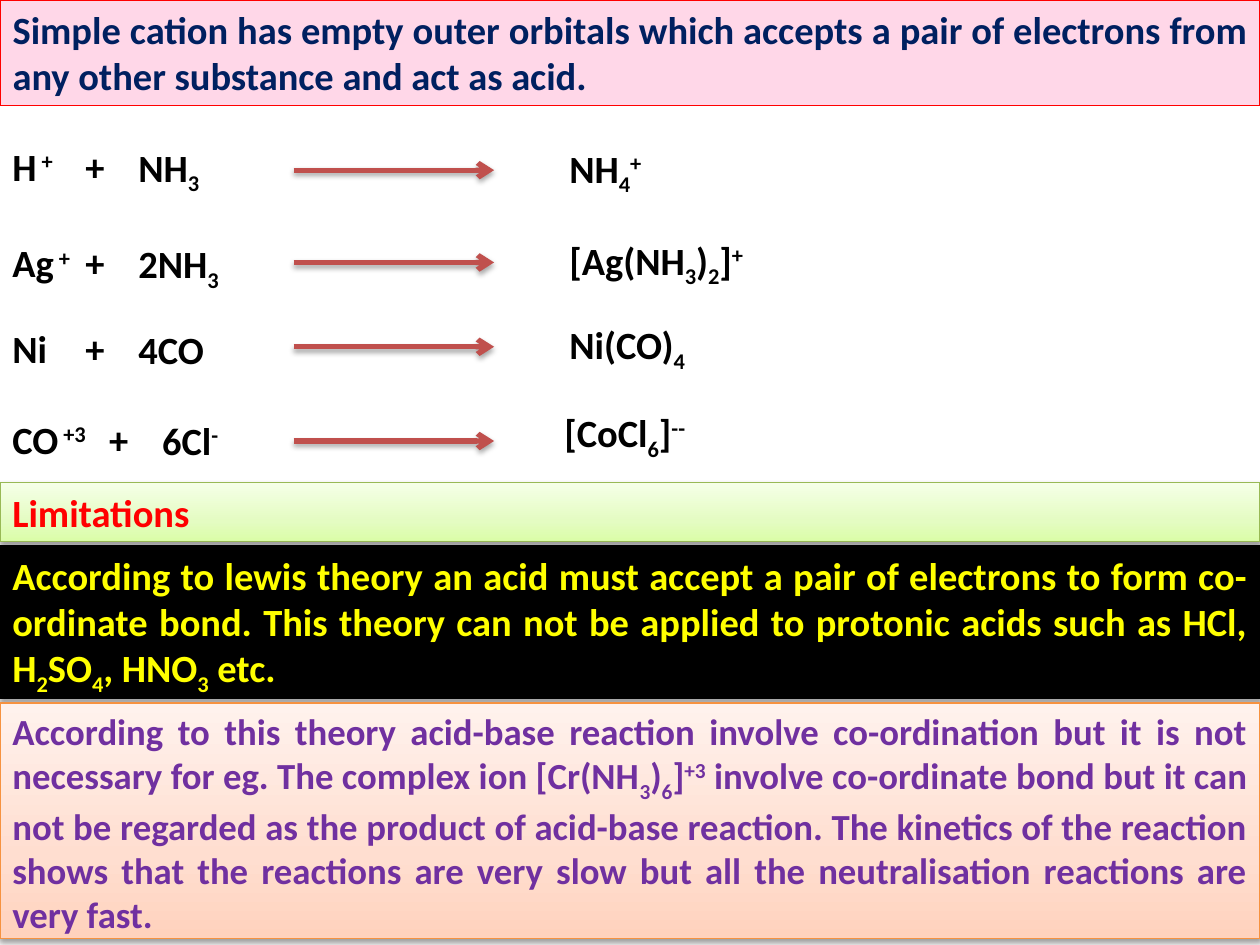
from dataclasses import dataclass
from typing import Optional

from lxml.etree import SubElement
from pptx import Presentation
from pptx.dml.color import RGBColor
from pptx.enum.shapes import MSO_CONNECTOR as Connector, MSO_SHAPE as Shape
from pptx.enum.text import MSO_ANCHOR as Anchor, MSO_AUTO_SIZE as AutoSize, PP_ALIGN as Align
from pptx.oxml.ns import qn
from pptx.util import Cm, Pt


@dataclass(frozen=True)
class Theme:
    font: str = "Calibri"
    size: float = 22
    small_size: float = 21
    ink: str = "000000"
    arrow: str = "C0504D"
    arrow_width: float = 3
    border_width: float = 0.75
    subscript: int = -25
    superscript: int = 30


THEME = Theme()
SLIDE_WIDTH, SLIDE_HEIGHT = 25.4, 19.05


@dataclass(frozen=True)
class Panel:
    """A full-width band; several fills make a gradient from bottom to top."""
    text: str
    top: float
    height: float
    fills: tuple[str, ...]
    border: str
    color: str
    size: float = THEME.size
    shadow: Optional[tuple[int, float]] = None  # opacity in %, distance in pt


@dataclass(frozen=True)
class Term:
    text: str
    width: float


@dataclass(frozen=True)
class Reaction:
    ion: Term
    ligand: Term
    product: Term
    top: float
    product_top: float
    arrow_y: float
    ligand_shift: float = 0
    product_shift: float = 0


# Scripts are set off with bars: |_3| is lowered, |^+| is raised
STATEMENT = Panel(
    "Simple cation has empty outer orbitals which accepts a pair of electrons "
    "from any other substance and act as acid.",
    0, 2.13, ("FFD7E8",), "FF0000", "002060")

LIMITATIONS = (
    Panel("Limitations", 9.73, 1.19, ("DAFDA7", "E4FCC2", "F5FFE7"),
          "98B955", "FF0000", shadow=(38, 1.6)),
    Panel("According to lewis theory an acid must accept a pair of electrons to "
          "form co-ordinate bond. This theory can not be applied to protonic acids "
          "such as HCl, H|_2|SO|_4|, HNO|_3| etc.",
          11, 3.07, ("000000",), "000000", "FFFF00", shadow=(35, 1.8)),
    Panel("According to this theory acid-base reaction involve co-ordination but it "
          "is not necessary for eg. The complex ion [Cr(NH|_3|)|_6|]|^+3| involve "
          "co-ordinate bond but it can not be regarded as the product of acid-base "
          "reaction. The kinetics of the reaction shows that the reactions are very "
          "slow but all the neutralisation reactions are very fast.",
          14.17, 4.75, ("FFD2BD", "FFDED0", "FFF2ED"),
          "F69240", "7030A0", THEME.small_size, (38, 1.6)),
)

REACTIONS = (
    Reaction(Term("H|^ +", 1.4), Term("NH|_3", 1.78), Term("NH|_4|^+", 2.06),
             2.75, 2.79, 3.43),
    Reaction(Term("Ag|^ +", 1.8), Term("2NH|_3", 2.18),
             Term("[Ag(NH|_3|)|_2|]|^+", 4.29), 4.7, 4.65, 5.29),
    Reaction(Term("Ni", 1.22), Term("4CO", 1.85), Term("Ni(CO)|_4", 2.92),
             6.42, 6.35, 6.99),
    Reaction(Term("CO|^ +3", 2.08), Term("6Cl|^-", 1.68),
             Term("[CoCl|_6|]|^--", 3.05), 8.26, 8.13, 8.89, 0.48, -0.1),
)
PLUS = Term("+", 0.91)
ION_X, PLUS_X, LIGAND_X, PRODUCT_X = 0, 1.47, 2.54, 11.23
ARROW_START, ARROW_END = 5.92, 9.96
TERM_HEIGHT = 1.19


def write(frame, text: str, *, color: str = THEME.ink, size: float = THEME.size,
          align=Align.LEFT, anchor=Anchor.TOP, wrap: bool = False) -> None:
    frame.word_wrap = wrap
    frame.auto_size = AutoSize.SHAPE_TO_FIT_TEXT
    frame.vertical_anchor = anchor
    paragraph = frame.paragraphs[0]
    paragraph.alignment = align
    baselines = {"_": THEME.subscript, "^": THEME.superscript}
    for piece in text.split("|"):
        baseline = baselines.get(piece[0])
        run = paragraph.add_run()
        run.text = piece[1:] if baseline else piece
        run.font.name = THEME.font
        run.font.size = Pt(size)
        run.font.bold = True
        run.font.color.rgb = RGBColor.from_string(color)
        if baseline:
            run.font._element.set("baseline", str(baseline * 1000))


def add_shadow(shape, opacity: int, distance: float) -> None:
    properties = shape._element.spPr
    effects = properties.find(qn("a:effectLst"))
    if effects is None:
        effects = SubElement(properties, qn("a:effectLst"))
    shadow = SubElement(effects, qn("a:outerShdw"), blurRad=str(Pt(3.1)),
                        dist=str(Pt(distance)), dir="5400000", rotWithShape="0")
    tint = SubElement(shadow, qn("a:srgbClr"), val="000000")
    SubElement(tint, qn("a:alpha"), val=str(opacity * 1000))


def fill_gradient(shape, colors: tuple[str, ...]) -> None:
    shape.fill.gradient()
    shape.fill.gradient_angle = 90
    stops = shape._element.spPr.find(qn("a:gradFill")).find(qn("a:gsLst"))
    for stop in list(stops):
        stops.remove(stop)
    for position, color in zip((0, 35, 100), colors):
        stop = SubElement(stops, qn("a:gs"), pos=str(position * 1000))
        SubElement(stop, qn("a:srgbClr"), val=color)


def format_panel(shape, panel: Panel) -> None:
    shape.left, shape.top = Cm(0), Cm(panel.top)
    shape.width, shape.height = Cm(SLIDE_WIDTH), Cm(panel.height)
    if len(panel.fills) > 1:
        fill_gradient(shape, panel.fills)
    else:
        shape.fill.solid()
        shape.fill.fore_color.rgb = RGBColor.from_string(panel.fills[0])
    shape.line.color.rgb = RGBColor.from_string(panel.border)
    shape.line.width = Pt(THEME.border_width)
    shape.shadow.inherit = False
    if panel.shadow:
        add_shadow(shape, *panel.shadow)
    write(shape.text_frame, panel.text, color=panel.color, size=panel.size,
          align=Align.JUSTIFY, wrap=True)


def add_term(slide, term: Term, left: float, top: float) -> None:
    box = slide.shapes.add_textbox(Cm(left), Cm(top), Cm(term.width), Cm(TERM_HEIGHT))
    write(box.text_frame, term.text)


def add_arrow(slide, y: float) -> None:
    arrow = slide.shapes.add_connector(
        Connector.STRAIGHT, Cm(ARROW_START), Cm(y), Cm(ARROW_END), Cm(y))
    arrow.line.color.rgb = RGBColor.from_string(THEME.arrow)
    arrow.line.width = Pt(THEME.arrow_width)
    SubElement(arrow._element.spPr.find(qn("a:ln")), qn("a:tailEnd"), type="arrow")
    add_shadow(arrow, 35, 1.8)


def add_reaction(slide, reaction: Reaction) -> None:
    shift = reaction.ligand_shift
    add_term(slide, reaction.ion, ION_X, reaction.top)
    add_term(slide, PLUS, PLUS_X + shift, reaction.top)
    add_term(slide, reaction.ligand, LIGAND_X + shift, reaction.top + 0.02)
    add_arrow(slide, reaction.arrow_y)
    add_term(slide, reaction.product, PRODUCT_X + reaction.product_shift,
             reaction.product_top)


def main() -> None:
    deck = Presentation()
    deck.slide_width, deck.slide_height = Cm(SLIDE_WIDTH), Cm(SLIDE_HEIGHT)
    slide = deck.slides.add_slide(deck.slide_layouts.get_by_name("Title Only"))

    # Opening statement
    format_panel(slide.shapes.title, STATEMENT)

    # Cations accepting electron pairs
    for reaction in REACTIONS:
        add_reaction(slide, reaction)

    # Limitations of the theory
    for panel in LIMITATIONS:
        band = slide.shapes.add_shape(Shape.RECTANGLE, 0, 0, 0, 0)
        format_panel(band, panel)

    deck.save("out.pptx")


if __name__ == "__main__":
    main()
